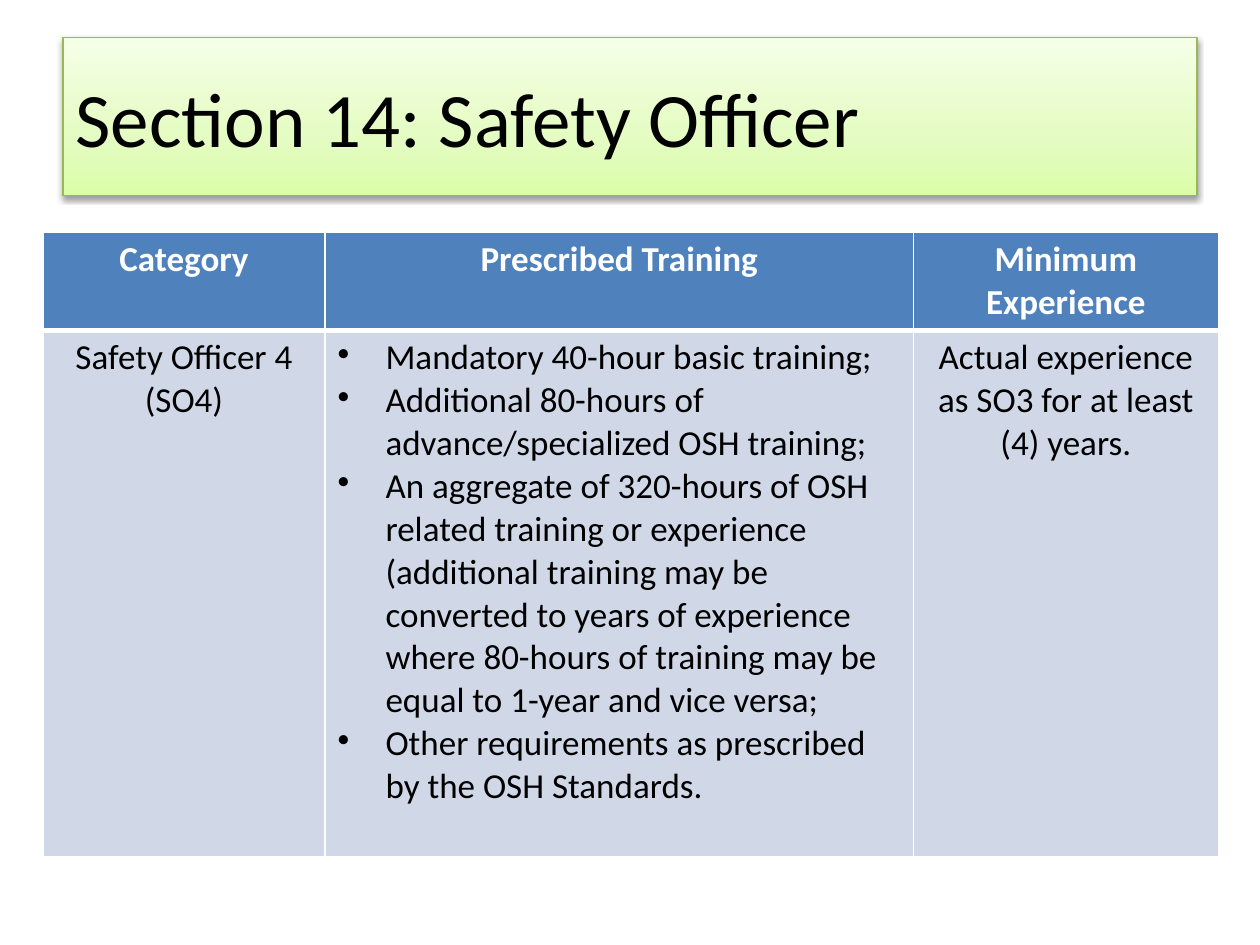
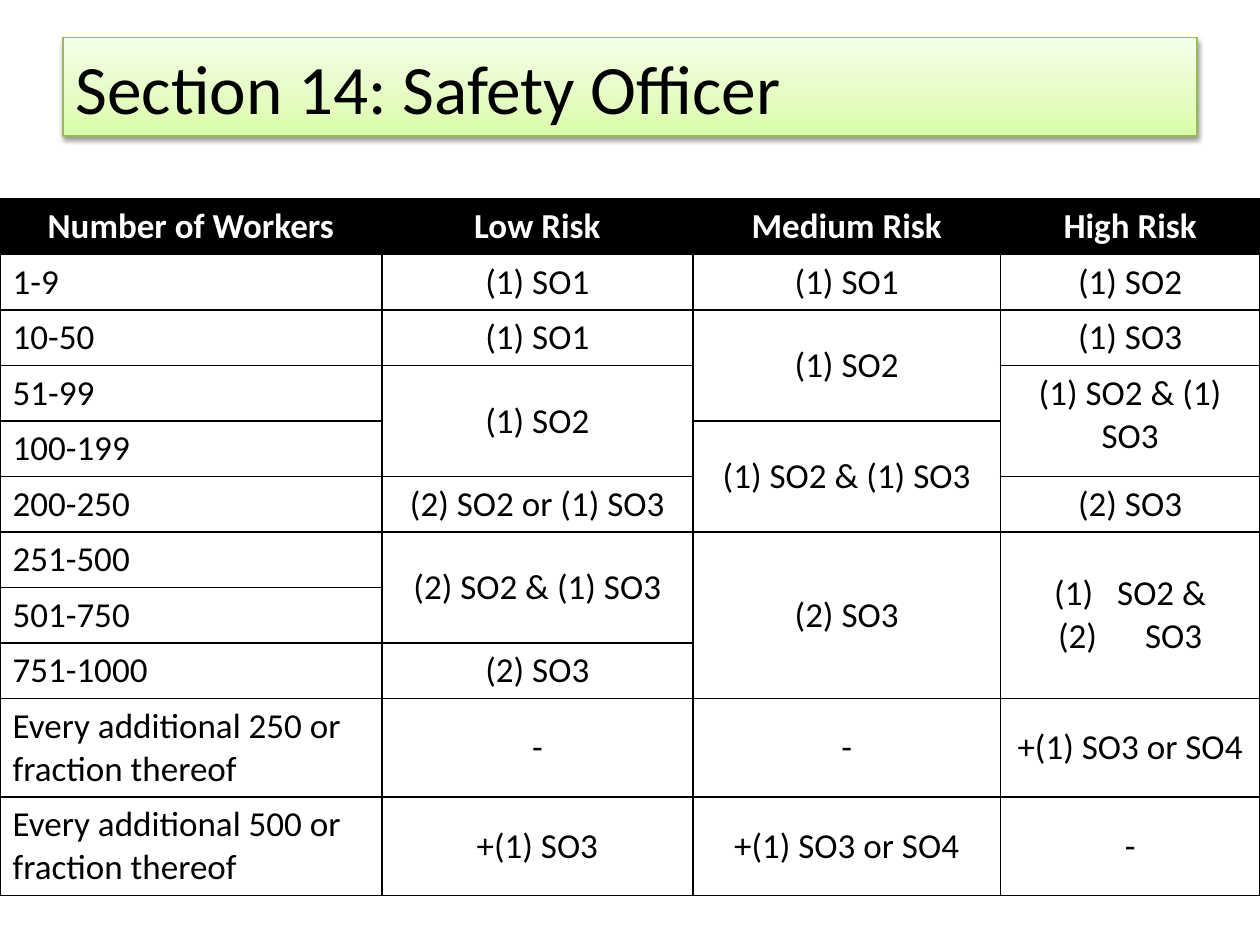
from pptx import Presentation
from pptx.dml.color import RGBColor
from pptx.enum.text import MSO_ANCHOR as Anchor, MSO_AUTO_SIZE as AutoSize, PP_ALIGN as Align
from pptx.oxml import parse_xml
from pptx.util import Inches, Pt

NAMESPACE = 'xmlns:a="http://schemas.openxmlformats.org/drawingml/2006/main"'
TITLE_ONLY = 5


class Deck:
    font_name = "Calibri"
    table_size = 20
    colours = {
        "white": "FFFFFF", "black": "000000", "header": "4F81BD", "body": "D0D8E8",
        "outline": "98B955", "deep": "DAFDA7", "middle": "E4FCC2", "pale": "F5FFE7",
    }

    def __init__(self):
        self.presentation = Presentation()
        self.presentation.slide_width = Inches(10)
        self.presentation.slide_height = Inches(7.5)
        self.slide = None

    def colour(self, name):
        return RGBColor.from_string(self.colours[name])

    def style(self, paragraph, size, colour, bold=False, align=Align.LEFT):
        paragraph.alignment = align
        for item in [paragraph.font] + [run.font for run in paragraph.runs]:
            item.name = self.font_name
            item.size = Pt(size)
            item.bold = bold
            item.color.rgb = self.colour(colour)

    def add_slide(self, title, height, size):
        layout = self.presentation.slide_layouts[TITLE_ONLY]
        self.slide = self.presentation.slides.add_slide(layout)
        shape = self.slide.shapes.title
        shape.left, shape.top = Inches(0.5), Inches(0.3)
        shape.width, shape.height = Inches(9), Inches(height)
        frame = shape.text_frame
        frame.text = title
        frame.auto_size = AutoSize.NONE
        frame.vertical_anchor = Anchor.MIDDLE
        self.style(frame.paragraphs[0], size, "black")
        self.title_band(shape)

    def title_band(self, shape):
        properties = shape.element.spPr
        stops = "".join(
            f'<a:gs pos="{position * 1000}"><a:srgbClr val="{self.colours[name]}"/></a:gs>'
            for position, name in ((0, "deep"), (35, "middle"), (100, "pale")))
        properties.append(parse_xml(
            f'<a:gradFill {NAMESPACE} rotWithShape="1"><a:gsLst>{stops}</a:gsLst>'
            f'<a:lin ang="{270 * 60000}" scaled="0"/></a:gradFill>'))
        shape.line.color.rgb = self.colour("outline")
        shape.line.width = Pt(0.75)
        properties.append(parse_xml(
            f'<a:effectLst {NAMESPACE}><a:outerShdw blurRad="{Pt(3.1)}" dist="{Pt(1.6)}" '
            f'dir="{90 * 60000}" rotWithShape="0"><a:srgbClr val="{self.colours["black"]}">'
            '<a:alpha val="38000"/></a:srgbClr></a:outerShdw></a:effectLst>'))

    def borders(self, cell, colour, bottom):
        properties = cell._tc.get_or_add_tcPr()
        for index, side in enumerate("LRTB"):
            width = Pt(bottom if side == "B" else 1)
            properties.insert(index, parse_xml(
                f'<a:ln{side} {NAMESPACE} w="{width}"><a:solidFill>'
                f'<a:srgbClr val="{self.colours[colour]}"/></a:solidFill></a:ln{side}>'))

    def bullet(self, paragraph, marker, indent):
        properties = paragraph._p.get_or_add_pPr()
        properties.set("marL", str(Inches(indent)))
        properties.set("indent", str(-Inches(indent)))
        properties.insert(0, parse_xml(marker))

    def table(self, left, top, widths, heights, rows, header, body, border,
              left_column, header_bottom=1, top_cells=(), marker=None, indents=()):
        frame = self.slide.shapes.add_table(
            len(rows), len(widths), Inches(left), Inches(top),
            Inches(sum(widths)), Inches(sum(heights)))
        table = frame.table
        table.horz_banding = False
        for column, width in zip(table.columns, widths):
            column.width = Inches(width)
        for row, height in zip(table.rows, heights):
            row.height = Inches(height)
        for r, values in enumerate(rows):
            for c, value in enumerate(values):
                cell = table.cell(r, c)
                is_header = r == 0
                cell.fill.solid()
                cell.fill.fore_color.rgb = self.colour(header if is_header else body)
                self.borders(cell, border, header_bottom if is_header else 1)
                if value is None:
                    continue
                last = r
                while last + 1 < len(rows) and rows[last + 1][c] is None:
                    last += 1
                if last > r:
                    cell.merge(table.cell(last, c))
                cell.vertical_anchor = Anchor.TOP if (r, c) in top_cells else Anchor.MIDDLE
                listed = isinstance(value, list)
                cell.text_frame.text = "\n".join(value) if listed else value
                align = Align.LEFT if c == left_column and not is_header else Align.CENTER
                for index, paragraph in enumerate(cell.text_frame.paragraphs):
                    self.style(paragraph, self.table_size,
                               "white" if is_header else "black", is_header, align)
                    if listed:
                        self.bullet(paragraph, marker, indents[index])


def training_slide(deck):
    training = [
        "Mandatory 40-hour basic training;",
        "Additional 80-hours of advance/specialized OSH training;",
        "An aggregate of 320-hours of OSH related training or experience (additional "
        "training may be converted to years of experience where 80-hours of training "
        "may be equal to 1-year and vice versa;",
        "Other requirements as prescribed by the OSH Standards.",
    ]
    rows = [
        ["Category", "Prescribed Training", "Minimum Experience"],
        ["Safety Officer 4 (SO4)", training,
         "Actual experience as SO3 for at least (4) years."],
    ]
    deck.add_slide("Section 14: Safety Officer", 1.25, 44)
    deck.table(0.34, 1.84, [2.24, 4.67, 2.42], [0.77, 4.18], rows,
               "header", "body", "white", left_column=1, header_bottom=3,
               top_cells={(r, c) for r in range(2) for c in range(3)},
               marker=f'<a:buChar {NAMESPACE} char="•"/>', indents=[0.38] * len(training))


def workers_slide(deck):
    rows = [
        ["Number of Workers", "Low Risk", "Medium Risk", "High Risk"],
        ["1-9", "(1) SO1", "(1) SO1", "(1) SO2"],
        ["10-50", "(1) SO1", "(1) SO2", "(1) SO3"],
        ["51-99", "(1) SO2", None, "(1) SO2 & (1) SO3"],
        ["100-199", None, "(1) SO2 & (1) SO3", None],
        ["200-250", "(2) SO2 or (1) SO3", None, "(2) SO3"],
        ["251-500", "(2) SO2 & (1) SO3", "(2) SO3", ["SO2 &", "SO3"]],
        ["501-750", None, None, None],
        ["751-1000", "(2) SO3", None, None],
        ["Every additional 250 or fraction thereof", "-", "-", "+(1) SO3 or SO4"],
        ["Every additional 500 or fraction thereof", "+(1) SO3", "+(1) SO3 or SO4", "-"],
    ]
    deck.add_slide("Section 14: Safety Officer", 0.78, 39.6)
    deck.table(0, 1.58, [3.03, 2.47, 2.44, 2.06], [0.44] * 9 + [0.78] * 2, rows,
               "black", "white", "black", left_column=0, top_cells={(3, 3)},
               marker=f'<a:buAutoNum {NAMESPACE} type="arabicParenBoth"/>',
               indents=[0.5, 0.69])


def main():
    deck = Deck()
    training_slide(deck)
    workers_slide(deck)
    deck.presentation.save("out.pptx")


if __name__ == "__main__":
    main()
